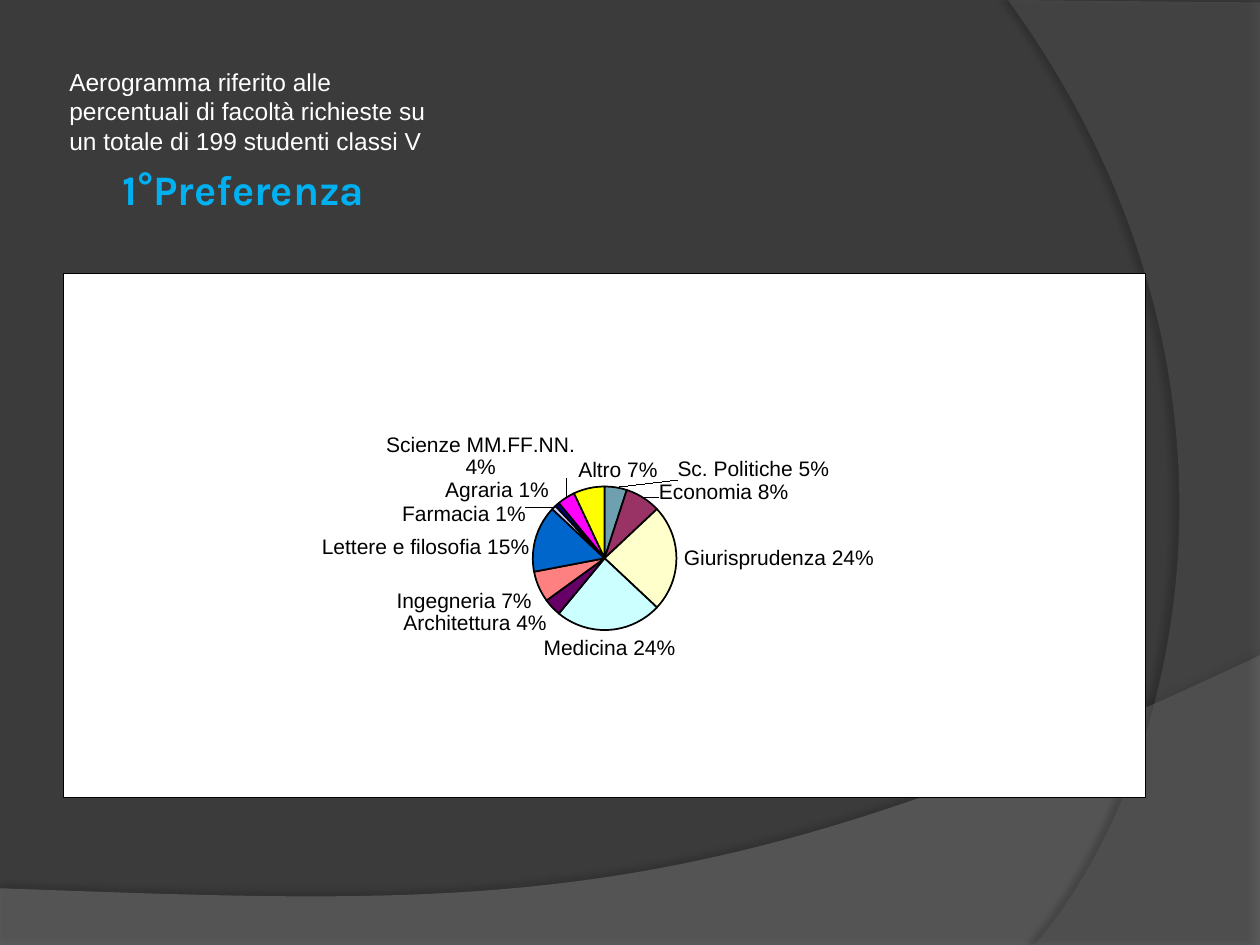
from copy import deepcopy

from pptx import Presentation
from pptx.chart.data import CategoryChartData
from pptx.dml.color import RGBColor
from pptx.enum.chart import XL_CHART_TYPE, XL_LABEL_POSITION
from pptx.enum.text import MSO_ANCHOR, MSO_AUTO_SIZE, PP_ALIGN
from pptx.oxml import parse_xml
from pptx.oxml.ns import nsdecls, qn
from pptx.util import Inches, Pt

WIDTH, HEIGHT = Inches(10), Inches(7.5)
FACULTIES = [
    ("Sc. Politiche", 5, "6EA0B0"),
    ("Economia", 8, "993366"),
    ("Giurisprudenza", 24, "FFFFCC"),
    ("Medicina", 24, "CCFFFF"),
    ("Architettura", 4, "660066"),
    ("Ingegneria", 7, "FF8080"),
    ("Lettere e filosofia", 15, "0066CC"),
    ("Farmacia", 1, "CCCCFF"),
    ("Agraria", 1, "000080"),
    ("Scienze MM.FF.NN.", 4, "FF00FF"),
    ("Altro", 7, "FFFF00"),
]
LABEL_SHIFTS = {
    "Sc. Politiche": (0.056, 0),
    "Economia": (0.011, 0.023),
    "Lettere e filosofia": (0.001, 0.042),
    "Farmacia": (-0.021, 0.044),
    "Agraria": (-0.003, 0.006),
    "Scienze MM.FF.NN.": (0.012, -0.025),
    "Altro": (0.065, 0),
}


def rgb(value):
    return RGBColor.from_string(value)


def share_box(left, top, width, height):
    return (int(left * WIDTH), int(top * HEIGHT),
            int(width * WIDTH), int(height * HEIGHT))


def set_font(font, size, color, name="Arial", bold=False):
    font.size, font.name, font.bold = Pt(size), name, bold
    font.color.rgb = rgb(color)


def add_wave(s, corners, controls, color, opacity, shadow_opacity, distance,
             angle):
    emu = [(Inches(x), Inches(y)) for x, y in corners]
    builder = s.shapes.build_freeform(*emu[0])
    builder.add_line_segments(emu[1:], close=True)
    sp = builder.convert_to_shape()
    last = sp._element.findall(".//" + qn("a:lnTo"))[-1]
    curve = [(Inches(x), Inches(y)) for x, y in controls] + [emu[-1]]
    points = "".join(f'<a:pt x="{x - sp.left}" y="{y - sp.top}"/>'
                     for x, y in curve)
    last.getparent().replace(last, parse_xml(
        f'<a:cubicBezTo {nsdecls("a")}>{points}</a:cubicBezTo>'))
    sp.fill.solid()
    sp.fill.fore_color.rgb = rgb(color)
    sp.line.fill.background()
    sp.fill._xPr.find(".//" + qn("a:srgbClr")).append(
        parse_xml(f'<a:alpha {nsdecls("a")} val="{opacity * 1000}"/>'))
    sp._element.spPr.append(parse_xml(
        f'<a:effectLst {nsdecls("a")}><a:outerShdw blurRad="{Pt(4)}" '
        f'dist="{Pt(distance)}" dir="{angle * 60000}" rotWithShape="0">'
        f'<a:srgbClr val="000000"><a:alpha val="{shadow_opacity * 1000}"/>'
        '</a:srgbClr></a:outerShdw></a:effectLst>'))


def add_backdrop(s):
    s.background.fill.solid()
    s.background.fill.fore_color.rgb = rgb("3B3B3B")
    add_wave(s, [(0, 7.05), (0, 7.51), (10, 7.51), (10, 5.2), (0, 7.05)],
             [(5.59, 7.29), (3.91, 7.19)], "7F7F7F", 45, 35, 3.5, 270)
    add_wave(s, [(10, 0.02), (10, 7.5), (8.21, 7.5), (8, 0)],
             [(9.35, 6.19), (10.18, 3)], "5E5E5E", 40, 45, 4, 180)


def fill_text(sp, box, text, anchor, **font):
    sp.left, sp.top, sp.width, sp.height = box
    tf = sp.text_frame
    tf.word_wrap = True
    tf.auto_size = MSO_AUTO_SIZE.NONE
    tf.vertical_anchor = anchor
    tf.margin_left = tf.margin_right = Inches(0.05)
    tf.margin_top = tf.margin_bottom = 0
    tf.text = text
    p = tf.paragraphs[0]
    p.alignment = PP_ALIGN.LEFT
    set_font(p.runs[0].font, **font)
    return p


def add_heading(s, title_box, intro_box):
    p = fill_text(s.shapes.title, title_box, "1°Preferenza", MSO_ANCHOR.TOP,
                  size=24, color="00B0F0", name="Karla", bold=True)
    p._p.get_or_add_pPr().set("marL", str(Inches(0.42)))
    fill_text(s.shapes.add_textbox(*intro_box), intro_box,
              "Aerogramma riferito alle percentuali di facoltà richieste su "
              "un totale di 199 studenti classi V", MSO_ANCHOR.BOTTOM,
              size=14, color="FFFFFF")


def manual_layout(settings, **lengths):
    sizes = "".join(f'<c:{key} val="{value}"/>'
                    for key, value in lengths.items())
    return parse_xml(f'<c:layout {nsdecls("c")}><c:manualLayout>'
                     f'{settings}{sizes}</c:manualLayout></c:layout>')


def format_chart_area(chart):
    space = chart._chartSpace
    space.chart.addnext(parse_xml(
        f'<c:spPr {nsdecls("c", "a")}><a:solidFill><a:srgbClr val="FFFFFF"/>'
        f'</a:solidFill><a:ln w="{Pt(0.25)}"><a:solidFill>'
        '<a:srgbClr val="000000"/></a:solidFill></a:ln></c:spPr>'))
    plot_area = space.chart.plotArea
    for old in plot_area.findall(qn("c:layout")):
        plot_area.remove(old)
    plot_area.insert(0, manual_layout(
        '<c:layoutTarget val="inner"/><c:xMode val="edge"/>'
        '<c:yMode val="edge"/>', x=0.278, y=0.407, w=0.445, h=0.274))


def format_labels(labels):
    labels.show_value = False
    labels.show_category_name = True
    labels.show_percentage = True
    labels.number_format = "0%"
    labels.number_format_is_linked = False
    labels.position = XL_LABEL_POSITION.OUTSIDE_END
    set_font(labels.font, 12, "000000")
    separator = parse_xml(f'<c:separator {nsdecls("c")}> </c:separator>')
    labels._element.find(qn("c:showPercent")).addnext(separator)
    bubble = labels._element.find(qn("c:showBubbleSize"))
    if bubble is not None:
        bubble.addnext(separator)


def shift_labels(labels, names):
    shared = [child for child in labels._element
              if child.tag != qn("c:showLeaderLines")]
    shifted = [name for name in names if name in LABEL_SHIFTS]
    for place, name in enumerate(shifted):
        x, y = LABEL_SHIFTS[name]
        label = parse_xml(f'<c:dLbl {nsdecls("c")}>'
                          f'<c:idx val="{names.index(name)}"/></c:dLbl>')
        label.append(manual_layout("", x=x, y=y))
        label.extend(deepcopy(shared))
        labels._element.insert(place, label)


def add_faculty_pie(s, box):
    names, values, colors = zip(*FACULTIES)
    data = CategoryChartData()
    data.categories = names
    data.add_series("Series 1", values)
    chart = s.shapes.add_chart(XL_CHART_TYPE.PIE, *box, data).chart
    chart.has_legend = False
    chart.has_title = False
    set_font(chart.font, 12, "000000")
    format_chart_area(chart)
    plot = chart.plots[0]
    plot.vary_by_categories = True
    series = plot.series[0]
    for i, color in enumerate(colors):
        point = series.points[i].format
        point.fill.solid()
        point.fill.fore_color.rgb = rgb(color)
        point.line.color.rgb = rgb("000000")
        point.line.width = Pt(1)
    format_labels(series.data_labels)
    shift_labels(series.data_labels, names)


def main():
    prs = Presentation()
    prs.slide_width, prs.slide_height = WIDTH, HEIGHT
    s = prs.slides.add_slide(prs.slide_layouts.get_by_name("Title Only"))
    add_backdrop(s)
    add_heading(s, share_box(0.05, 0.173, 0.35, 0.107),
                share_box(0.05, 0.03, 0.3, 0.134))
    add_faculty_pie(s, share_box(0.05, 0.289, 0.859, 0.555))
    prs.save("out.pptx")


if __name__ == "__main__":
    main()
